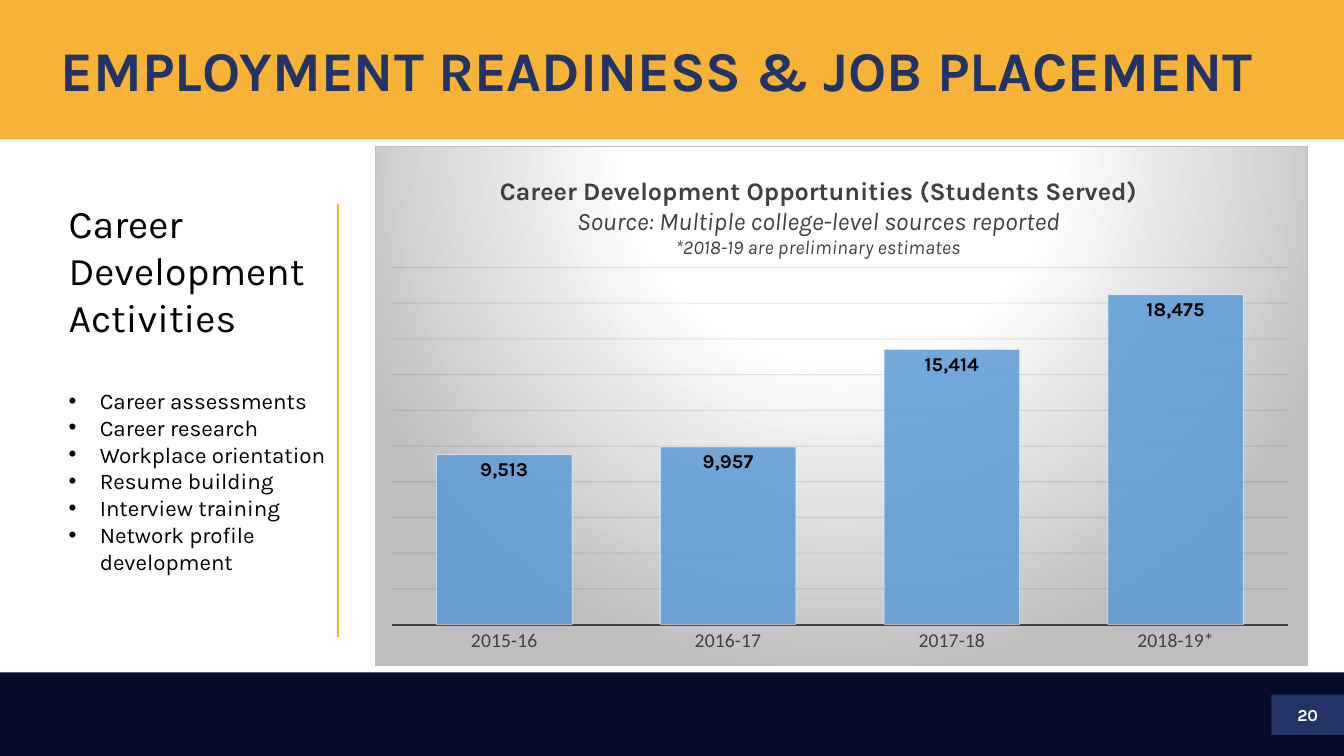
from dataclasses import dataclass

import lxml.etree
import pptx
import pptx.chart.data
import pptx.dml.color
import pptx.enum.chart
import pptx.enum.shapes
import pptx.enum.text
import pptx.oxml
import pptx.oxml.ns
import pptx.util

SLIDE_WIDTH = pptx.util.Inches(13.33)
SLIDE_HEIGHT = pptx.util.Inches(7.5)
GOLD, NAVY, MIDNIGHT = "F6B336", "223365", "050A28"
BLACK, WHITE, CHARCOAL = "000000", "FFFFFF", "404040"
SILVER, BLUE, GRID = "BFBFBF", "5B9BD5", "0D0D0D"
DISPLAY_FONT, AXIS_FONT = "Karla", "Calibri"
BULLET_INDENT = pptx.util.Inches(0.31)


@dataclass(frozen=True)
class Frame:
    """Left, top, width and height in percent of the slide."""
    left: float
    top: float
    width: float
    height: float

    def lengths(self) -> tuple[int, int, int, int]:
        return (across(self.left), down(self.top), across(self.width), down(self.height))


@dataclass(frozen=True)
class Band:
    frame: Frame
    color: str
    text: str = ""


@dataclass(frozen=True)
class TitleLine:
    text: str
    size: float
    bold: bool = False
    italic: bool = False


BANDS = [
    Band(Frame(0, 0, 100, 18.4), GOLD),
    Band(Frame(0, 88.93, 100, 11.07), MIDNIGHT),
    Band(Frame(94.6, 91.87, 5.4, 5.33), NAVY, "20"),
]
TITLE_FRAME = Frame(3.75, 0, 92.2, 19.33)
BODY_FRAME = Frame(4.35, 25.73, 21.38, 51.6)
DIVIDER_FRAME = Frame(25.13, 26.93, 0, 57.34)
CHART_FRAME = Frame(27.91, 19.33, 69.39, 68.8)

ACTIVITIES = [
    "Career assessments",
    "Career research",
    "Workplace orientation",
    "Resume building",
    "Interview training",
    "Network profile development",
]
CHART_TITLE = [
    TitleLine("Career Development Opportunities (Students Served)", 18, bold=True),
    TitleLine("Source: Multiple college-level sources reported", 18, italic=True),
    TitleLine("*2018-19 are preliminary estimates", 14, italic=True),
]
STUDENTS_SERVED = {"2015-16": 9513, "2016-17": 9957, "2017-18": 15414, "2018-19*": 18475}


def across(percent: float) -> int:
    return round(SLIDE_WIDTH * percent / 100)


def down(percent: float) -> int:
    return round(SLIDE_HEIGHT * percent / 100)


def rgb(color: str) -> pptx.dml.color.RGBColor:
    return pptx.dml.color.RGBColor.from_string(color)


def style_font(font, size: float, color: str, name: str = DISPLAY_FONT,
               bold: bool = False, italic: bool = False) -> None:
    font.size = pptx.util.Pt(size)
    font.color.rgb = rgb(color)
    font.name = name
    font.bold = bold
    font.italic = italic


def style_line(line, color: str, width: float) -> None:
    line.color.rgb = rgb(color)
    line.width = pptx.util.Pt(width)


def place(shape, frame: Frame) -> None:
    shape.left, shape.top, shape.width, shape.height = frame.lengths()


def add_band(slide, band: Band, depth: int) -> None:
    shape = slide.shapes.add_shape(pptx.enum.shapes.MSO_SHAPE.RECTANGLE, *band.frame.lengths())
    shape.shadow.inherit = False
    shape.fill.solid()
    shape.fill.fore_color.rgb = rgb(band.color)
    shape.line.fill.background()
    slide.shapes._spTree.insert(2 + depth, shape._element)
    if band.text:
        shape.text_frame.vertical_anchor = pptx.enum.text.MSO_ANCHOR.MIDDLE
        paragraph = shape.text_frame.paragraphs[0]
        paragraph.text = band.text
        paragraph.alignment = pptx.enum.text.PP_ALIGN.CENTER
        style_font(paragraph.font, 12, WHITE, bold=True)


def fill_title(title) -> None:
    place(title, TITLE_FRAME)
    title.text_frame.auto_size = pptx.enum.text.MSO_AUTO_SIZE.NONE
    title.text_frame.vertical_anchor = pptx.enum.text.MSO_ANCHOR.MIDDLE
    paragraph = title.text_frame.paragraphs[0]
    paragraph.text = "EMPLOYMENT READINESS & JOB PLACEMENT"
    paragraph.alignment = pptx.enum.text.PP_ALIGN.LEFT
    paragraph.line_spacing = 0.9
    style_font(paragraph.font, 40, NAVY, bold=True)


def set_bullet(paragraph, character: str, indent: int) -> None:
    properties = paragraph._p.get_or_add_pPr()
    properties.set("marL", str(indent))
    properties.set("indent", str(-indent))
    tag = "a:buChar" if character else "a:buNone"
    bullet = lxml.etree.SubElement(properties, pptx.oxml.ns.qn(tag))
    if character:
        bullet.set("char", character)


def fill_body(body) -> None:
    place(body, BODY_FRAME)
    text_frame = body.text_frame
    text_frame.auto_size = pptx.enum.text.MSO_AUTO_SIZE.NONE
    text_frame.word_wrap = True
    heading = text_frame.paragraphs[0]
    heading.text = "Career Development Activities"
    set_bullet(heading, "", 0)
    heading.space_before = pptx.util.Pt(0)
    style_font(heading.font, 28, BLACK)
    for index, activity in enumerate(ACTIVITIES):
        paragraph = text_frame.add_paragraph()
        paragraph.text = activity
        set_bullet(paragraph, "•", BULLET_INDENT)
        paragraph.space_before = pptx.util.Pt(0 if index else 33)
        style_font(paragraph.font, 16, BLACK)


def add_divider(slide) -> None:
    left, top, width, height = DIVIDER_FRAME.lengths()
    divider = slide.shapes.add_connector(
        pptx.enum.shapes.MSO_CONNECTOR.STRAIGHT, left, top, left + width, top + height)
    style_line(divider.line, GOLD, 1.5)
    lxml.etree.SubElement(divider._element.spPr, pptx.oxml.ns.qn("a:effectLst"))


def set_layout(parent, position: int, settings: dict[str, str | float]) -> None:
    for existing in parent.findall(pptx.oxml.ns.qn("c:layout")):
        parent.remove(existing)
    layout = lxml.etree.Element(pptx.oxml.ns.qn("c:layout"))
    manual = lxml.etree.SubElement(layout, pptx.oxml.ns.qn("c:manualLayout"))
    for name, value in settings.items():
        lxml.etree.SubElement(manual, pptx.oxml.ns.qn(f"c:{name}")).set("val", str(value))
    parent.insert(position, layout)


def set_opacity(chart, location: str, percent: int) -> None:
    for color in chart._chartSpace.xpath(f".//{location}//a:srgbClr"):
        lxml.etree.SubElement(color, pptx.oxml.ns.qn("a:alpha")).set("val", str(percent * 1000))


def fill_chart_background(chart) -> None:
    stops = "".join(
        f'<a:gs pos="{share * 1000}"><a:srgbClr val="{color}"/></a:gs>'
        for share, color in [(0, WHITE), (39, WHITE), (100, SILVER)])
    background = pptx.oxml.parse_xml(
        f'<c:spPr {pptx.oxml.ns.nsdecls("c", "a")}><a:gradFill><a:gsLst>{stops}</a:gsLst>'
        '<a:path path="circle"><a:fillToRect l="50000" t="-80000" r="50000" b="180000"/></a:path>'
        f'</a:gradFill><a:ln w="9525"><a:solidFill><a:srgbClr val="{SILVER}"/></a:solidFill></a:ln>'
        '</c:spPr>')
    chart._chartSpace.find(pptx.oxml.ns.qn("c:chart")).addnext(background)


def title_chart(chart) -> None:
    text_frame = chart.chart_title.text_frame
    for index, line in enumerate(CHART_TITLE):
        paragraph = text_frame.add_paragraph() if index else text_frame.paragraphs[0]
        run = paragraph.add_run()
        run.text = line.text
        style_font(run.font, line.size, CHARCOAL, bold=line.bold, italic=line.italic)
    set_layout(chart.chart_title._element, 1,
               {"xMode": "edge", "yMode": "edge", "x": 0.13, "y": 0.05})


def add_students_chart(slide) -> None:
    data = pptx.chart.data.CategoryChartData(number_format="#,##0")
    data.categories = list(STUDENTS_SERVED)
    data.add_series("Series 1", list(STUDENTS_SERVED.values()))
    chart = slide.shapes.add_chart(
        pptx.enum.chart.XL_CHART_TYPE.COLUMN_CLUSTERED, *CHART_FRAME.lengths(), data).chart
    style_font(chart.font, 10, BLACK, AXIS_FONT)
    chart.has_legend = False
    title_chart(chart)
    fill_chart_background(chart)
    set_layout(chart._chartSpace.xpath(".//c:plotArea")[0], 0, {
        "layoutTarget": "inner", "xMode": "edge", "yMode": "edge",
        "x": 0.018, "y": 0.233, "w": 0.961, "h": 0.688})

    years = chart.category_axis
    years.major_tick_mark = pptx.enum.chart.XL_TICK_MARK.NONE
    style_font(years.tick_labels.font, 14, CHARCOAL, AXIS_FONT)
    style_line(years.format.line, CHARCOAL, 1.5)
    students = chart.value_axis
    students.minimum_scale, students.maximum_scale, students.major_unit = 0, 20000, 2000
    students.has_major_gridlines = True
    style_line(students.major_gridlines.format.line, GRID, 0.75)
    students.visible = False

    plot = chart.plots[0]
    plot.gap_width = 65
    plot.vary_by_categories = False
    columns = plot.series[0]
    columns.format.fill.solid()
    columns.format.fill.fore_color.rgb = rgb(BLUE)
    style_line(columns.format.line, WHITE, 0.75)
    labels = columns.data_labels
    labels.show_value = True
    labels.number_format = "#,##0"
    labels.number_format_is_linked = False
    labels.position = pptx.enum.chart.XL_LABEL_POSITION.INSIDE_END
    style_font(labels.font, 14, BLACK, bold=True)
    set_opacity(chart, "c:majorGridlines", 10)
    set_opacity(chart, "c:ser/c:spPr/a:solidFill", 85)
    set_opacity(chart, "c:ser/c:spPr/a:ln", 50)


def main() -> None:
    presentation = pptx.Presentation()
    presentation.slide_width, presentation.slide_height = SLIDE_WIDTH, SLIDE_HEIGHT
    slide = presentation.slides.add_slide(presentation.slide_layouts[1])
    for depth, band in enumerate(BANDS):
        add_band(slide, band, depth)
    fill_title(slide.shapes.title)
    fill_body(slide.placeholders[1])
    add_divider(slide)
    add_students_chart(slide)
    presentation.save("out.pptx")


if __name__ == "__main__":
    main()
